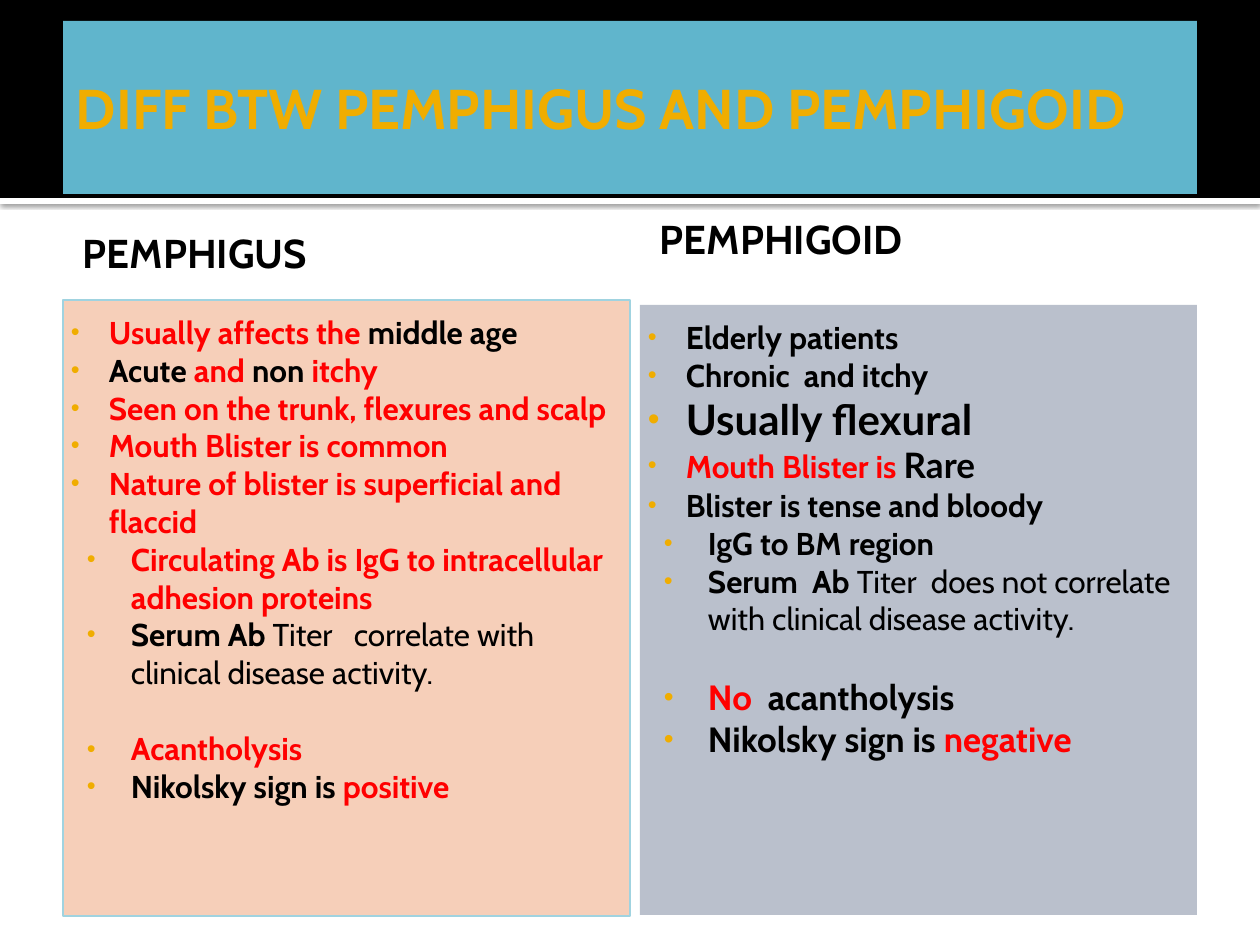
from lxml import etree
from pptx import Presentation
from pptx.dml.color import RGBColor
from pptx.enum.shapes import MSO_SHAPE
from pptx.enum.text import MSO_ANCHOR, MSO_AUTO_SIZE, PP_ALIGN
from pptx.oxml.ns import qn
from pptx.util import Pt

RECT = MSO_SHAPE.RECTANGLE
TOP, MIDDLE = MSO_ANCHOR.TOP, MSO_ANCHOR.MIDDLE
TITLE_ONLY = 5

THEME = {
    "black": "000000", "white": "FFFFFF", "red": "FF0000", "gold": "F0AD00",
    "blue": "60B5CC", "peach": "F6CFB9", "grey": "BAC0CC", "edge": "A0D3E0",
    "font": "Cabin", "accent_font": "Lato",
    "title": 32, "heading": 23, "body": 18, "large": 20, "largest": 24,
}

# Content: a line is (level, gap before in points, runs); a run is (text, style)
TITLE = "DIFF BTW PEMPHIGUS AND PEMPHIGOID"
RED = {"color": "red"}
BLACK = {}
PLAIN = {"bold": False}
LARGE = {"size": "large"}
LARGE_RED = {"size": "large", "color": "red"}
LARGE_ACCENT = {"size": "large", "font": "accent_font"}
LARGEST_ACCENT = {"size": "largest", "font": "accent_font"}
GAP = 22

PEMPHIGUS = [
    (0, 0, [("Usually affects the ", RED), ("middle age", BLACK)]),
    (0, 0, [("Acute", BLACK), (" and ", RED), ("non", BLACK), (" itchy", RED)]),
    (0, 0, [("Seen on the trunk, flexures and scalp", RED)]),
    (0, 0, [("Mouth Blister is common", RED)]),
    (0, 0, [("Nature of blister is superficial and flaccid", RED)]),
    (1, 0, [("Circulating Ab is IgG to intracellular adhesion proteins", RED)]),
    (1, 0, [("Serum Ab ", BLACK),
            ("Titer   correlate with clinical disease activity.", PLAIN)]),
    (1, GAP, [("Acantholysis", RED)]),
    (1, 0, [("Nikolsky sign is ", BLACK), ("positive", RED)]),
]
PEMPHIGOID = [
    (0, 0, [("Elderly patients", BLACK)]),
    (0, 0, [("Chronic  and itchy", BLACK)]),
    (0, 0, [("Usually flexural", LARGEST_ACCENT)]),
    (0, 0, [("Mouth Blister is ", RED), ("Rare", LARGE_ACCENT)]),
    (0, 0, [("Blister is tense and bloody", BLACK)]),
    (1, 0, [("IgG to BM region", BLACK)]),
    (1, 0, [("Serum  Ab ", BLACK),
            ("Titer  does not correlate with clinical disease activity.", PLAIN)]),
    (1, GAP, [("No  ", LARGE_RED), ("acantholysis", LARGE)]),
    (1, 0, [("Nikolsky sign is ", LARGE), ("negative", LARGE_RED)]),
]

# Layout in px: boxes are left, top, width, height
SLIDE = (1260, 945)
HEADER = (0, 0, 1260, 198)
RULE = (0, 198, 1260, 6)
TITLE_BOX = (63, 21, 1134, 173)
COLUMNS = [
    {"heading": "PEMPHIGUS", "heading_box": (63, 212, 557, 74),
     "lines": PEMPHIGUS, "box": (63, 300, 567, 616), "fill": "peach", "line": "edge"},
    {"heading": "PEMPHIGOID", "heading_box": (640, 186, 557, 98),
     "lines": PEMPHIGOID, "box": (640, 305, 557, 610), "fill": "grey", "line": None},
]
TITLE_INSETS = (13, 6, 6, 6)
HEADING_INSETS = (20, 13, 13, 6)
BODY_INSETS = (8, 13, 13, 6)
INDENTS = [(38, -38), (60, -44)]  # left margin and first line, by level


def px(n):
    return round(n * 914400 / 126)


def color(name):
    return RGBColor.from_string(THEME[name])


def add_rect(s, box, fill, line=None):
    sp = s.shapes.add_shape(RECT, *map(px, box))
    sp.shadow.inherit = False
    sp.fill.solid()
    sp.fill.fore_color.rgb = color(fill)
    if line:
        sp.line.color.rgb = color(line)
        sp.line.width = Pt(0.75)
    else:
        sp.line.fill.background()
    return sp


def set_frame(tf, insets, anchor):
    tf.word_wrap = True
    tf.auto_size = MSO_AUTO_SIZE.NONE
    tf.vertical_anchor = anchor
    tf.margin_left, tf.margin_top, tf.margin_right, tf.margin_bottom = map(px, insets)


def add_run(p, text, size="body", color_name="black", font="font", bold=True):
    r = p.add_run()
    r.text = text
    r.font.name = THEME[font]
    r.font.size = Pt(THEME[size])
    r.font.bold = bold
    r.font.color.rgb = color(color_name)


def add_bullet(p, level):
    pPr = p._p.get_or_add_pPr()
    margin, indent = INDENTS[level]
    pPr.set("marL", str(px(margin)))
    pPr.set("indent", str(px(indent)))
    clr = etree.SubElement(pPr, qn("a:buClr"))
    etree.SubElement(clr, qn("a:srgbClr"), val=THEME["gold"])
    etree.SubElement(pPr, qn("a:buSzPct"), val="80000")
    etree.SubElement(pPr, qn("a:buFont"), typeface="Arial")
    etree.SubElement(pPr, qn("a:buChar"), char="•")


def add_lines(tf, lines):
    for i, (level, gap, runs) in enumerate(lines):
        p = tf.add_paragraph() if i else tf.paragraphs[0]
        p.alignment = PP_ALIGN.LEFT
        p.space_before = Pt(gap)
        add_bullet(p, level)
        for text, style in runs:
            add_run(p, text, style.get("size", "body"), style.get("color", "black"),
                    style.get("font", "font"), style.get("bold", True))


def add_drop_shadow(sp):
    effects = sp._element.spPr.find(qn("a:effectLst"))
    shadow = etree.SubElement(effects, qn("a:outerShdw"), blurRad=str(Pt(2.5)),
                              dist=str(Pt(0.8)), dir="5400000", rotWithShape="0")
    clr = etree.SubElement(shadow, qn("a:srgbClr"), val=THEME["black"])
    etree.SubElement(clr, qn("a:alpha"), val="60000")


def main():
    prs = Presentation()
    prs.slide_width, prs.slide_height = map(px, SLIDE)
    s = prs.slides.add_slide(prs.slide_layouts[TITLE_ONLY])

    # Header band and rule
    add_drop_shadow(add_rect(s, RULE, "white"))
    add_rect(s, HEADER, "black")

    # Title, brought in front of the header band
    title = s.shapes.title
    title.element.getparent().append(title.element)
    title.left, title.top, title.width, title.height = map(px, TITLE_BOX)
    title.fill.solid()
    title.fill.fore_color.rgb = color("blue")
    set_frame(title.text_frame, TITLE_INSETS, MIDDLE)
    p = title.text_frame.paragraphs[0]
    p.alignment = PP_ALIGN.LEFT
    add_run(p, TITLE, "title", "gold")

    # Compared columns
    for col in COLUMNS:
        tf = s.shapes.add_textbox(*map(px, col["heading_box"])).text_frame
        set_frame(tf, HEADING_INSETS, MIDDLE)
        add_run(tf.paragraphs[0], col["heading"], "heading")

        tf = add_rect(s, col["box"], col["fill"], col["line"]).text_frame
        set_frame(tf, BODY_INSETS, TOP)
        add_lines(tf, col["lines"])

    prs.save("out.pptx")


if __name__ == "__main__":
    main()
